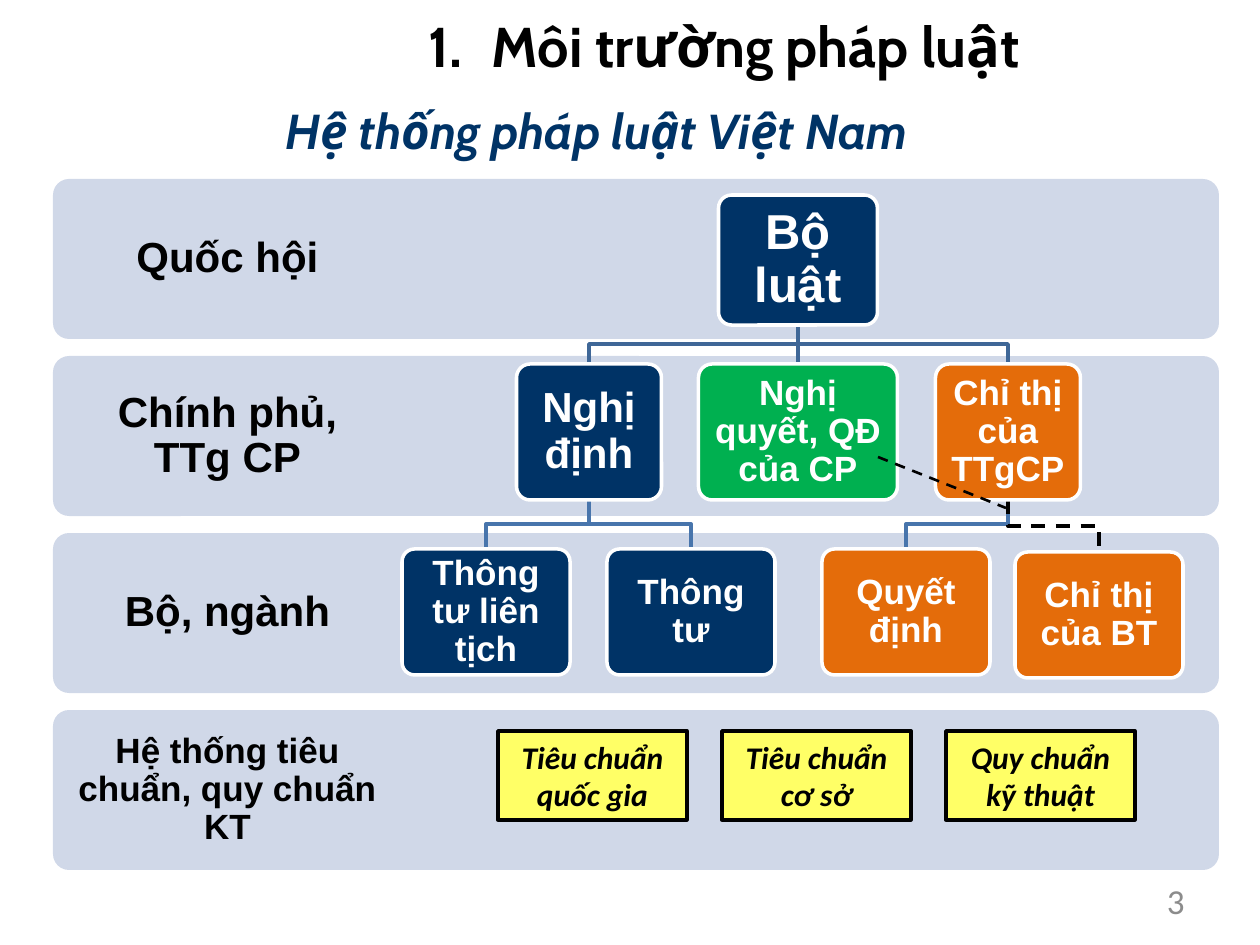
"""Build a slide on the levels of the Vietnamese legal system."""
import lxml.etree
import pptx
import pptx.dml.color
import pptx.enum.dml
import pptx.enum.shapes
import pptx.enum.text
import pptx.oxml.ns
import pptx.util

SCALE = 914400 / 126
SHAPE = pptx.enum.shapes.MSO_SHAPE
ALIGN = pptx.enum.text.PP_ALIGN
MIDDLE = pptx.enum.text.MSO_ANCHOR.MIDDLE
DASH = pptx.enum.dml.MSO_LINE.DASH

THEME = {
    "band": "D0D8E8", "navy": "003366", "green": "00B050", "orange": "E46C0A",
    "yellow": "FFFF66", "white": "FFFFFF", "black": "000000", "grey": "8C8C8C",
    "upper_link": "3F6797", "lower_link": "4875AC",
    "title": 32, "subtitle": 28, "large": 24, "small": 20, "note": 18,
    "heading_font": "Cabin", "chart_font": "Arial", "body_font": "Calibri",
    "line": 2, "thin_line": 1.5,
}

TITLE = "Môi trường pháp luật"
SUBTITLE = "Hệ thống pháp luật Việt Nam"
PAGE_NUMBER = "3"
BANDS = [
    ("Quốc hội", "large", 24),
    ("Chính phủ, TTg CP", "large", 24),
    ("Bộ, ngành", "large", 24),
    ("Hệ thống tiêu chuẩn, quy chuẩn KT", "small", 20),
]
NODES = {
    "code": ("Bộ luật", "navy", "subtitle", 798, 195, 159, 130, 15),
    "decree": ("Nghị định", "navy", "large", 589, 364, 145, 136, 13),
    "resolution": ("Nghị quyết, QĐ của CP", "green", "small", 798, 364, 199, 136, 10),
    "pm_directive": ("Chỉ thị của TTgCP", "orange", "small", 1008, 364, 145, 136, 10),
    "joint_circular": ("Thông tư liên tịch", "navy", "small", 486, 549, 168, 126, 10),
    "circular": ("Thông tư", "navy", "small", 691, 549, 168, 126, 10),
    "decision": ("Quyết định", "orange", "small", 906, 549, 168, 126, 10),
    "directive": ("Chỉ thị của BT", "orange", "small", 1099, 552, 168, 126, 10),
}
LINKS = [
    ("code", "decree", "upper_link", None),
    ("code", "resolution", "upper_link", None),
    ("code", "pm_directive", "upper_link", None),
    ("decree", "joint_circular", "lower_link", None),
    ("decree", "circular", "lower_link", None),
    ("pm_directive", "decision", "lower_link", None),
    ("pm_directive", "directive", "black", DASH),
]
STANDARDS = ["Tiêu chuẩn quốc gia", "Tiêu chuẩn cơ sở", "Quy chuẩn kỹ thuật"]


def px(length):
    return pptx.util.Emu(round(length * SCALE))


def color(name):
    return pptx.dml.color.RGBColor.from_string(THEME[name])


def apply(target, values):
    for name, value in values.items():
        setattr(target, name, value)


def write(paragraph, text, size, ink, face, align, spacing=None, **styles):
    apply(paragraph, {"alignment": align, "line_spacing": spacing})
    span = paragraph.add_run()
    span.text = text
    apply(span.font, {"size": pptx.util.Pt(THEME[size]), "name": THEME[face], **styles})
    span.font.color.rgb = color(ink)


def set_frame(box, inset=None):
    frame = box.text_frame
    apply(frame, {"word_wrap": True, "vertical_anchor": MIDDLE})
    if inset is not None:
        sides = ("left", "top", "right", "bottom")
        apply(frame, {f"margin_{side}": px(inset) for side in sides})
    return frame


def add_text(page, area, inset=None):
    return set_frame(page.shapes.add_textbox(*map(px, area)), inset)


def set_line(line, ink, width="line", dash=None):
    apply(line, {"width": pptx.util.Pt(THEME[width]), "dash_style": dash})
    line.color.rgb = color(ink)


def add_panel(page, kind, area, fill, outline=None):
    panel = page.shapes.add_shape(kind, *map(px, area))
    panel.shadow.inherit = False
    panel.fill.solid()
    panel.fill.fore_color.rgb = color(fill)
    if kind == SHAPE.ROUNDED_RECTANGLE:
        panel.adjustments[0] = 0.1
    if outline:
        set_line(panel.line, outline)
    else:
        panel.line.fill.background()
    return panel


def add_straight(page, start, end, ink, width="line", dash=None):
    straight = pptx.enum.shapes.MSO_CONNECTOR.STRAIGHT
    link = page.shapes.add_connector(straight, *map(px, (*start, *end)))
    properties = link._element.spPr
    set_line(link.line, ink, width, dash)
    lxml.etree.SubElement(properties, pptx.oxml.ns.qn("a:effectLst"))


def add_link(page, parent, child, ink, dash):
    x, top, _, height = NODES[parent][3:7]
    child_x, child_top = NODES[child][3:5]
    bottom = top + height
    if x == child_x:
        add_straight(page, (x, bottom), (x, child_top), ink)
        return
    middle = (bottom + child_top) // 2
    builder = page.shapes.build_freeform(x, bottom, scale=SCALE)
    builder.add_line_segments([(x, middle), (child_x, middle), (child_x, child_top)], close=False)
    link = builder.convert_to_shape()
    link.shadow.inherit = False
    link.fill.background()
    set_line(link.line, ink, dash=dash)


def add_bands(page):
    for row, (label, size, inset) in enumerate(BANDS):
        top = 179 + 177 * row
        add_panel(page, SHAPE.ROUNDED_RECTANGLE, (53, top, 1166, 160), "band")
        frame = add_text(page, (53, top, 349, 160), inset)
        write(frame.paragraphs[0], label, size, "black", "chart_font", ALIGN.CENTER, 0.9, bold=True)


def add_nodes(page):
    for text, fill, size, x, top, width, height, inset in NODES.values():
        area = (x - width / 2, top, width, height)
        box = add_panel(page, SHAPE.ROUNDED_RECTANGLE, area, fill, "white")
        frame = set_frame(box, inset)
        write(frame.paragraphs[0], text, size, "white", "chart_font", ALIGN.CENTER, 0.9, bold=True)


def add_standards(page):
    for column, text in enumerate(STANDARDS):
        area = (498 + 224 * column, 731, 189, 89)
        frame = set_frame(add_panel(page, SHAPE.RECTANGLE, area, "yellow", "black"))
        write(frame.paragraphs[0], text, "note", "black", "body_font", ALIGN.CENTER,
              bold=True, italic=True)


def add_headings(page):
    frame = add_text(page, (273, 16, 903, 139))
    heading = frame.paragraphs[0]
    properties = heading._p.get_or_add_pPr()
    properties.set("marL", str(px(63)))
    properties.set("indent", str(px(-63)))
    lxml.etree.SubElement(properties, pptx.oxml.ns.qn("a:buFont"), typeface="+mj-lt")
    lxml.etree.SubElement(properties, pptx.oxml.ns.qn("a:buAutoNum"), type="arabicPeriod")
    write(heading, TITLE, "title", "black", "heading_font", ALIGN.CENTER, bold=True)
    subheading = frame.add_paragraph()
    subheading.space_before = pptx.util.Pt(12)
    write(subheading, SUBTITLE, "subtitle", "navy", "heading_font", ALIGN.LEFT,
          bold=True, italic=True)


def main():
    deck = pptx.Presentation()
    apply(deck, {"slide_width": px(1260), "slide_height": px(945)})
    page = deck.slides.add_slide(deck.slide_layouts[6])
    add_bands(page)
    for link in LINKS:
        add_link(page, *link)
    add_nodes(page)
    number = add_text(page, (903, 876, 294, 50))
    write(number.paragraphs[0], PAGE_NUMBER, "small", "grey", "body_font", ALIGN.RIGHT)
    add_headings(page)
    add_straight(page, (878, 457), (1006, 508), "black", "thin_line", DASH)
    add_standards(page)
    deck.save("out.pptx")


if __name__ == "__main__":
    main()
